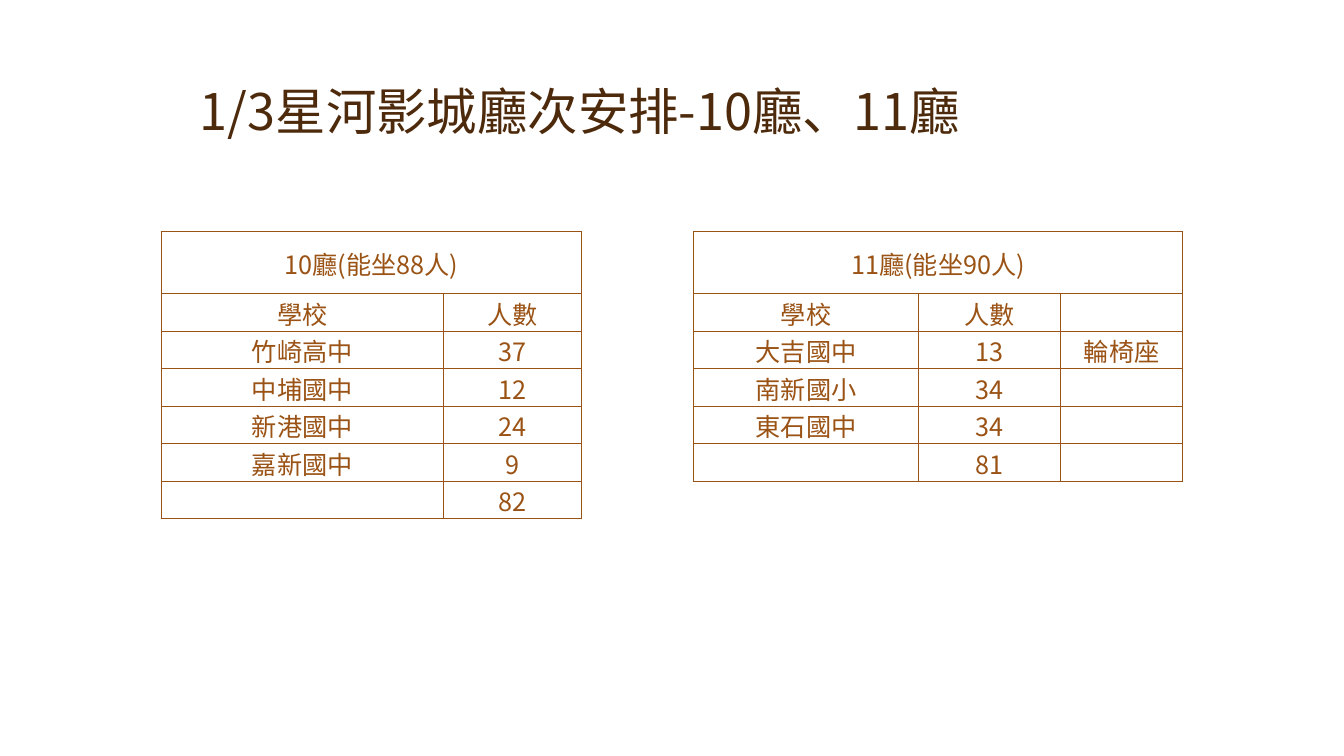
from lxml import etree
from pptx import Presentation
from pptx.dml.color import RGBColor
from pptx.enum.text import MSO_ANCHOR as Anchor, PP_ALIGN as Align
from pptx.oxml.ns import qn
from pptx.util import Inches, Pt

COLOURS = {"title": "4D2A0B", "table": "9A5315"}
FONT = "Noto Sans CJK SC"
TITLE_ROW, BODY_ROW = 8.2, 4.96
TABLE_TOP = 30.67


class HallPage:
    """Holds the style and the slide; lengths are percentages of the slide's size."""

    def __init__(self, deck):
        self.width, self.height = deck.slide_width, deck.slide_height
        self.page = deck.slides.add_slide(deck.slide_layouts[5])

    def across(self, share):
        return round(self.width * share / 100)

    def down(self, share):
        return round(self.height * share / 100)

    def centred_text(self, frame, text, size, colour):
        para = frame.paragraphs[0]
        para.alignment = Align.CENTER
        span = para.add_run()
        span.text = text
        for name, value in {"name": FONT, "size": Pt(size), "bold": False}.items():
            setattr(span.font, name, value)
        span.font.color.rgb = RGBColor.from_string(COLOURS[colour])
        east_asian = etree.SubElement(span.font._element, qn("a:ea"))
        east_asian.set("typeface", FONT)
        return para

    def title(self, text, width, height):
        box = self.page.shapes.title
        place = {"left": 0, "top": 0, "width": self.across(width), "height": self.down(height)}
        for name, value in place.items():
            setattr(box, name, value)
        box.text_frame.word_wrap = True
        box.text_frame.vertical_anchor = Anchor.BOTTOM
        self.centred_text(box.text_frame, text, 36, "title").line_spacing = 0.9

    def border(self, cell):
        properties = cell._tc.get_or_add_tcPr()
        for place, side in enumerate(("lnL", "lnR", "lnT", "lnB")):
            line = etree.Element(qn(f"a:{side}"), w=str(Pt(1)))
            fill = etree.SubElement(line, qn("a:solidFill"))
            etree.SubElement(fill, qn("a:srgbClr"), val=COLOURS["table"])
            properties.insert(place, line)

    def hall_table(self, left, columns, heading, rows):
        """Draw one hall: a merged heading above its rows."""
        rows = [[heading] + [""] * (len(columns) - 1)] + rows
        heights = [TITLE_ROW] + [BODY_ROW] * (len(rows) - 1)
        table = self.page.shapes.add_table(
            len(rows), len(columns), self.across(left), self.down(TABLE_TOP),
            self.across(sum(columns)), self.down(sum(heights))).table
        table.first_row = table.horz_banding = False
        for column, share in zip(table.columns, columns):
            column.width = self.across(share)
        for row, share in zip(table.rows, heights):
            row.height = self.down(share)
        table.cell(0, 0).merge(table.cell(0, len(columns) - 1))
        edge = Inches(0.01)
        layout = {"margin_left": edge, "margin_right": edge, "margin_top": edge,
                  "margin_bottom": 0, "vertical_anchor": Anchor.MIDDLE}
        for row, texts in zip(table.rows, rows):
            for cell, text in zip(row.cells, texts):
                for name, value in layout.items():
                    setattr(cell, name, value)
                cell.fill.background()
                self.border(cell)
                if text:
                    self.centred_text(cell.text_frame, text, 18, "table")


def main():
    deck = Presentation()
    deck.slide_width, deck.slide_height = Inches(13.33), Inches(7.5)
    page = HallPage(deck)
    page.title("1/3星河影城廳次安排-10廳、11廳", 86.27, 19.33)
    page.hall_table(12, [21, 10.28], "10廳(能坐88人)", [
        ["學校", "人數"],
        ["竹崎高中", "37"],
        ["中埔國中", "12"],
        ["新港國中", "24"],
        ["嘉新國中", "9"],
        ["", "82"],
    ])
    page.hall_table(51.61, [16.73, 10.58, 9.08], "11廳(能坐90人)", [
        ["學校", "人數", ""],
        ["大吉國中", "13", "輪椅座"],
        ["南新國小", "34", ""],
        ["東石國中", "34", ""],
        ["", "81", ""],
    ])
    deck.save("out.pptx")


if __name__ == "__main__":
    main()
